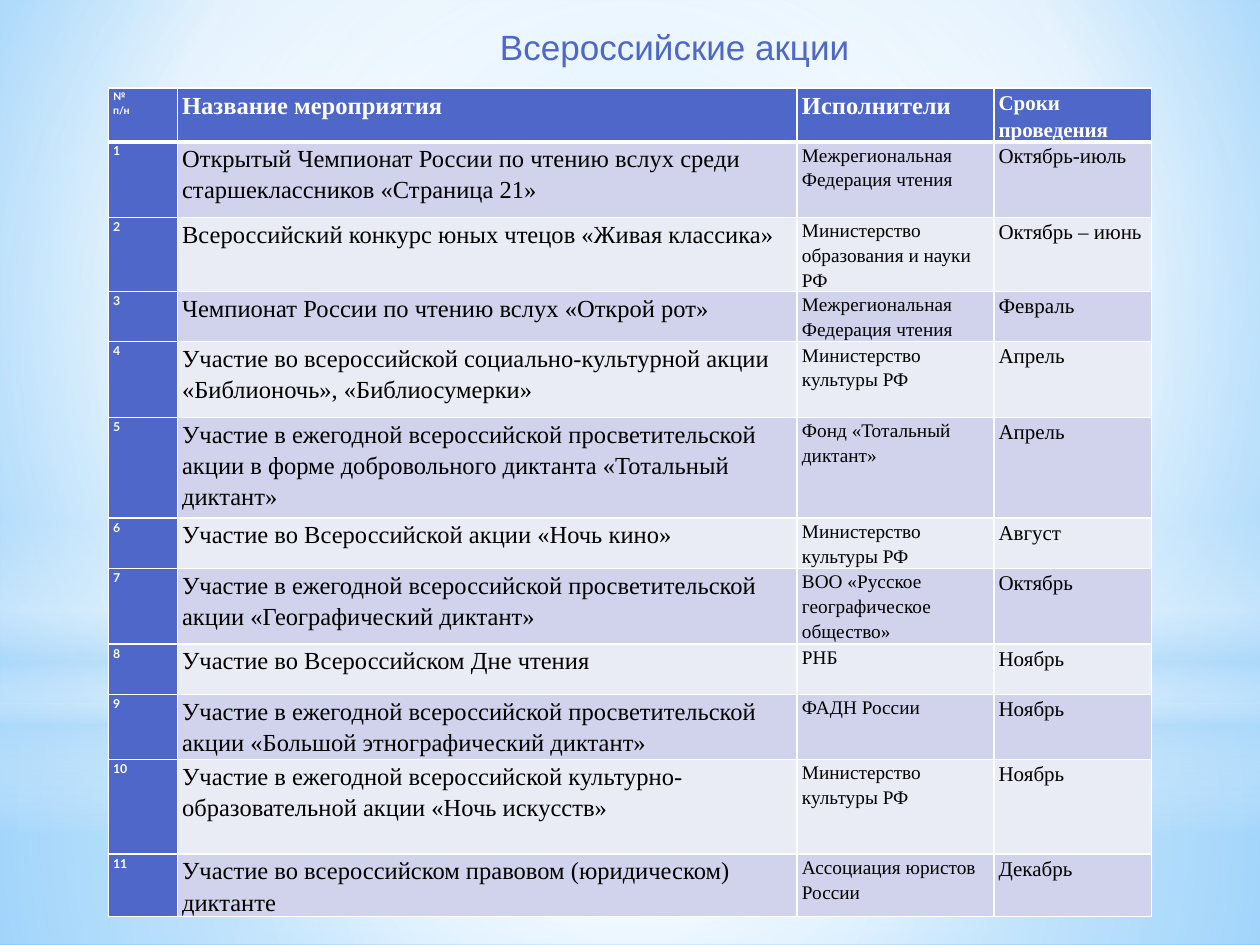
from lxml.etree import SubElement
from pptx import Presentation
from pptx.dml.color import RGBColor
from pptx.enum.shapes import MSO_SHAPE as Preset
from pptx.enum.text import MSO_ANCHOR as Anchor, PP_ALIGN as Align
from pptx.oxml import parse_xml
from pptx.oxml.ns import nsdecls, qn
from pptx.util import Pt

WHITE = RGBColor(0xFF, 0xFF, 0xFF)
BLACK = RGBColor(0x00, 0x00, 0x00)
INDIGO = RGBColor(0x4E, 0x67, 0xC8)
LILAC = RGBColor(0xD0, 0xD3, 0xEB)
PALE = RGBColor(0xE9, 0xEB, 0xF5)
SKY = RGBColor(0x9E, 0xD5, 0xFF)
AZURE = RGBColor(0x5B, 0xB9, 0xFF)
MIST = RGBColor(0xB4, 0xDC, 0xFA)
SERIF = "Times New Roman"


def set_gradient(owner, stops, focus=None):
    """Swap the solid fill for a circular gradient, or a vertical one without focus."""
    gradient = parse_xml(f'<a:gradFill {nsdecls("a")} rotWithShape="1"><a:gsLst/></a:gradFill>')
    for position, color, opacity in stops:
        stop = SubElement(gradient[0], qn("a:gs"), pos=str(position * 1000))
        tint = SubElement(stop, qn("a:srgbClr"), val=str(color))
        if opacity < 100:
            SubElement(tint, qn("a:alpha"), val=str(opacity * 1000))
    if focus:
        circle = SubElement(gradient, qn("a:path"), {"path": "circle"})
        sides = {side: str(share * 1000) for side, share in zip("ltrb", focus)}
        SubElement(circle, qn("a:fillToRect"), sides)
    else:
        SubElement(gradient, qn("a:lin"), ang="5400000", scaled="0")
    solid = owner.find(qn("a:solidFill"))
    owner.replace(solid, gradient)


def add_border(cell, side, width):
    line = SubElement(cell._tc.get_or_add_tcPr(), qn(f"a:ln{side}"), w=str(Pt(width)))
    paint = SubElement(line, qn("a:solidFill"))
    SubElement(paint, qn("a:srgbClr"), val=str(WHITE))


prs = Presentation()
prs.slide_width, prs.slide_height = Pt(720), Pt(540)
slide = prs.slides.add_slide(prs.slide_layouts[6])

# Background
slide.background.fill.solid()
set_gradient(slide._element.find(".//" + qn("p:bgPr")),
             [(0, SKY, 100), (60, WHITE, 100), (100, AZURE, 100)], (20, 10, 20, 60))

# Soft light layers: preset, top, height, stops, focus
CENTER = (50, 50, 50, 50)
light_layers = [
    (Preset.RECTANGLE, 402, 138, [(0, WHITE, 91), (37, WHITE, 76), (100, MIST, 79)], CENTER),
    (Preset.RECTANGLE, 0, 402, [(0, WHITE, 89), (48, WHITE, 62), (100, MIST, 79)], CENTER),
    (Preset.RECTANGLE, 297, 180, [(0, WHITE, 0), (29, WHITE, 30), (45, MIST, 40),
                                  (55, WHITE, 26), (65, MIST, 60), (100, WHITE, 0)], None),
    (Preset.OVAL, 126, 402, [(0, WHITE, 100), (56, WHITE, 0)], CENTER),
]
for preset, top, height, stops, focus in light_layers:
    layer = slide.shapes.add_shape(preset, 0, Pt(top), Pt(720), Pt(height))
    layer.shadow.inherit = False
    layer.line.fill.background()
    layer.fill.solid()
    set_gradient(layer._element.spPr, stops, focus)

# Table of events
events = [
    ("№\nп/н", "Название мероприятия", "Исполнители", "Сроки проведения"),
    ("1", "Открытый Чемпионат России по чтению вслух среди старшеклассников «Страница 21»",
     "Межрегиональная Федерация чтения", "Октябрь-июль"),
    ("2", "Всероссийский конкурс юных чтецов «Живая классика»",
     "Министерство образования и науки РФ", "Октябрь – июнь"),
    ("3", "Чемпионат России по чтению вслух «Открой рот»",
     "Межрегиональная Федерация чтения", "Февраль"),
    ("4", "Участие во всероссийской социально-культурной акции «Библионочь», «Библиосумерки»",
     "Министерство культуры РФ", "Апрель"),
    ("5", "Участие в ежегодной всероссийской просветительской акции в форме добровольного "
     "диктанта «Тотальный диктант»", "Фонд «Тотальный диктант»", "Апрель"),
    ("6", "Участие во Всероссийской акции «Ночь кино»", "Министерство культуры РФ", "Август"),
    ("7", "Участие в ежегодной всероссийской просветительской акции «Географический диктант»",
     "ВОО «Русское географическое общество»", "Октябрь"),
    ("8", "Участие во Всероссийском Дне чтения", "РНБ", "Ноябрь"),
    ("9", "Участие в ежегодной всероссийской просветительской акции "
     "«Большой этнографический диктант»", "ФАДН России", "Ноябрь"),
    ("10", "Участие в ежегодной всероссийской культурно-образовательной акции «Ночь искусств»",
     "Министерство культуры РФ", "Ноябрь"),
    ("11", "Участие во всероссийском правовом (юридическом) диктанте",
     "Ассоциация юристов России", "Декабрь"),
]
column_widths = [39.4, 354.2, 112.4, 90]
row_heights = [28.8, 43.2, 28.8, 28.8, 43.2, 57.6, 28.8, 43.2, 28.8, 37.2, 54, 28.8]
header_sizes = [6, 14, 14, 12]
body_sizes = [7, 14, 11, 12]
cell_format = {"margin_left": Pt(2.7), "margin_right": Pt(2.7),
               "margin_top": 0, "margin_bottom": 0}

schedule = slide.shapes.add_table(len(events), len(column_widths), Pt(62), Pt(50.4),
                                  Pt(596), Pt(sum(row_heights))).table
schedule.first_row = schedule.horz_banding = False
for column, width in zip(schedule.columns, column_widths):
    column.width = Pt(width)
for row, height in zip(schedule.rows, row_heights):
    row.height = Pt(height)

for r, event in enumerate(events):
    for c, words in enumerate(event):
        cell = schedule.cell(r, c)
        cell.text = words
        for name, value in cell_format.items():
            setattr(cell, name, value)
        for side in "LRTB":
            header_edge = (r, side) in ((0, "B"), (1, "T"))
            add_border(cell, side, 3 if header_edge else 1)
        strong = r == 0 or c == 0
        cell.fill.solid()
        cell.fill.fore_color.rgb = INDIGO if strong else LILAC if r % 2 else PALE
        font_format = {"name": SERIF if c else "Lato", "bold": strong,
                       "size": Pt((body_sizes if r else header_sizes)[c])}
        for paragraph in cell.text_frame.paragraphs:
            paragraph.line_spacing = 1.15
            for name, value in font_format.items():
                setattr(paragraph.runs[0].font, name, value)
            paragraph.runs[0].font.color.rgb = WHITE if strong else BLACK

# Title
title = slide.shapes.add_textbox(Pt(201.6), Pt(9.4), Pt(368), Pt(53.3)).text_frame
title_format = {"word_wrap": True, "vertical_anchor": Anchor.TOP, "margin_top": Pt(5)}
for name, value in title_format.items():
    setattr(title, name, value)
heading = title.paragraphs[0]
heading.text = "Всероссийские акции"
heading.alignment = Align.CENTER
heading_font = heading.runs[0].font
for name, value in {"name": "Arial", "size": Pt(20), "bold": False}.items():
    setattr(heading_font, name, value)
heading_font.color.rgb = INDIGO

prs.save("out.pptx")
